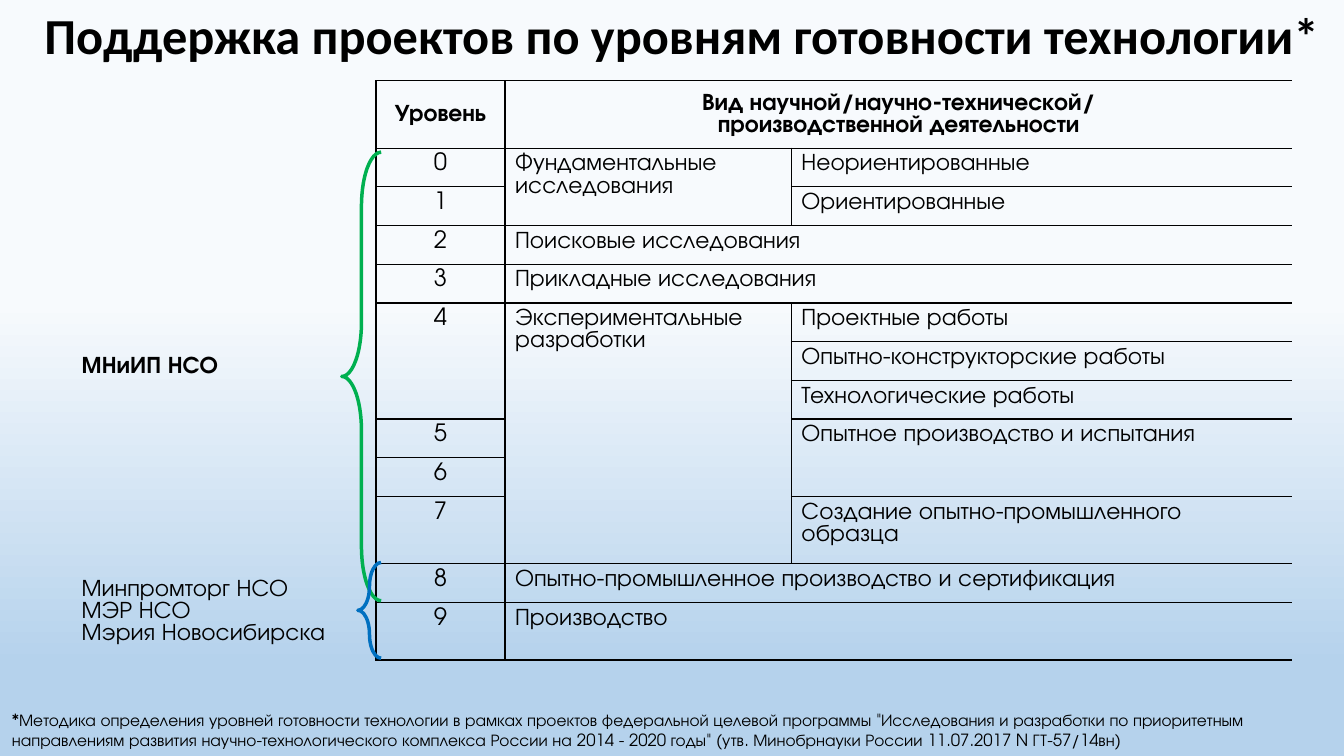
from lxml import etree
from pptx import Presentation
from pptx.dml.color import RGBColor
from pptx.enum.shapes import MSO_SHAPE as Shape
from pptx.enum.text import MSO_ANCHOR as Anchor, PP_ALIGN as Align
from pptx.oxml import parse_xml
from pptx.oxml.ns import nsdecls, qn
from pptx.util import Inches, Pt

BLACK = RGBColor(0x00, 0x00, 0x00)
GREEN = RGBColor(0x00, 0xB0, 0x50)
BLUE = RGBColor(0x00, 0x70, 0xC0)
SKY_LIGHT = RGBColor(0xF7, 0xFA, 0xFD)
SKY_DEEP = RGBColor(0xB5, 0xD2, 0xEC)

BODY_FONT = "TeX Gyre Adventor"
TITLE_FONT = "Calibri"
NO_STYLE = "{2D5ABB26-0587-4C30-8999-92F81FD0307C}"

TITLE = "Поддержка проектов по уровням готовности технологии*"
FOOTNOTE = (
    "*Методика определения уровней готовности технологии в рамках проектов "
    'федеральной целевой программы "Исследования и разработки по приоритетным '
    "направлениям развития научно-технологического комплекса России на "
    '2014 - 2020 годы" (утв. Минобрнауки России 11.07.2017 N ГТ-57/14вн)'
)

TABLE_HEIGHT = 5.74
COLUMN_WIDTHS = [3.02, 1.28, 2.84, 4.97]
TALL_ROWS = {0: 0.67, 10: 0.67, 12: 0.57}
ROW_COUNT = 13
SINGLE_ROW = (TABLE_HEIGHT - sum(TALL_ROWS.values())) / (ROW_COUNT - len(TALL_ROWS))

SUPPORTERS = [
    (1, 10, "МНиИП НСО"),
    (11, 2, "Минпромторг НСО\nМЭР НСО\nМэрия Новосибирска"),
]
LEVEL_SPANS = [1, 1, 1, 1, 3, 1, 1, 1, 1, 1]
ACTIVITIES = [
    (1, 2, 2, 1, "Фундаментальные исследования"),
    (1, 3, 1, 1, "Неориентированные"),
    (2, 3, 1, 1, "Ориентированные"),
    (3, 2, 1, 2, "Поисковые исследования"),
    (4, 2, 1, 2, "Прикладные исследования"),
    (5, 2, 6, 1, "Экспериментальные разработки"),
    (5, 3, 1, 1, "Проектные работы"),
    (6, 3, 1, 1, "Опытно-конструкторские работы"),
    (7, 3, 1, 1, "Технологические работы"),
    (8, 3, 2, 1, "Опытное производство и испытания"),
    (10, 3, 1, 1, "Создание опытно-промышленного образца"),
    (11, 2, 1, 2, "Опытно-промышленное производство и сертификация"),
    (12, 2, 1, 2, "Производство"),
]


def style_text(text_frame, size, font_name, bold=False, align=Align.LEFT):
    """Format every paragraph and run of a text frame."""
    for paragraph in text_frame.paragraphs:
        paragraph.alignment = align
        for run in paragraph.runs:
            run.font.size = Pt(size)
            run.font.name = font_name
            run.font.bold = bold
            run.font.color.rgb = BLACK


def add_text(slide, box, text, size, font_name, anchor=Anchor.TOP, **style):
    """Add a wrapped text box."""
    text_frame = slide.shapes.add_textbox(*map(Inches, box)).text_frame
    text_frame.word_wrap = True
    text_frame.vertical_anchor = anchor
    text_frame.text = text
    style_text(text_frame, size, font_name, **style)


def add_brace(slide, box, color):
    """Add an outlined left brace."""
    shape = slide.shapes.add_shape(Shape.LEFT_BRACE, *map(Inches, box))
    shape.shadow.inherit = False
    shape.fill.background()
    shape.line.color.rgb = color
    shape.line.width = Pt(2.5)
    shape.adjustments[0] = 1.38
    shape.adjustments[1] = 0.5


def set_borders(cell, sides):
    """Draw thin black lines on the given sides of a cell."""
    properties = cell._tc.get_or_add_tcPr()
    for position, side in enumerate(sides):
        line = parse_xml(f'<a:ln{side} {nsdecls("a")} w="{Pt(1)}"/>')
        fill = etree.SubElement(line, qn("a:solidFill"))
        etree.SubElement(fill, qn("a:srgbClr"), val=str(BLACK))
        properties.insert(position, line)


def fill_cell(table, row, column, rows, columns, text, sides,
              anchor=Anchor.TOP, bold=False, align=Align.LEFT):
    """Merge a block of cells if needed, then write and outline it."""
    cell = table.cell(row, column)
    if rows * columns > 1:
        cell.merge(table.cell(row + rows - 1, column + columns - 1))
    cell.text_frame.text = text
    cell.vertical_anchor = anchor
    style_text(cell.text_frame, 17, BODY_FONT, bold, align)
    set_borders(cell, sides)
    return cell


def add_level_table(slide):
    """Add the table of readiness levels."""
    table = slide.shapes.add_table(
        ROW_COUNT, len(COLUMN_WIDTHS),
        Inches(0.71), Inches(0.8), Inches(12.11), Inches(TABLE_HEIGHT),
    ).table
    table._tbl.tblPr.find(qn("a:tableStyleId")).text = NO_STYLE
    table.first_row = table.horz_banding = False
    for column, width in zip(table.columns, COLUMN_WIDTHS):
        column.width = Inches(width)
    for index, row in enumerate(table.rows):
        row.height = Inches(TALL_ROWS.get(index, SINGLE_ROW))
    for cell in table.iter_cells():
        cell.fill.background()

    heading = {"anchor": Anchor.MIDDLE, "bold": True, "align": Align.CENTER}
    fill_cell(table, 0, 1, 1, 1, "Уровень", "LRTB", **heading)
    fill_cell(table, 0, 2, 1, 2,
              "Вид научной/научно-технической/\nпроизводственной деятельности",
              "LTB", **heading)

    for row, rows, text in SUPPORTERS:
        main_supporter = row == 1
        cell = fill_cell(table, row, 0, rows, 1, text, "R",
                         anchor=Anchor.MIDDLE, bold=main_supporter)
        if main_supporter:
            cell.margin_top = Inches(0.27)

    for level, rows in enumerate(LEVEL_SPANS):
        row = 1 + sum(LEVEL_SPANS[:level])
        fill_cell(table, row, 1, rows, 1, str(level), "LRTB", align=Align.CENTER)

    for row, column, rows, columns, text in ACTIVITIES:
        sides = "LTB" if column + columns == len(COLUMN_WIDTHS) else "LRTB"
        fill_cell(table, row, column, rows, columns, text, sides)


def set_background(slide):
    """Give the slide a vertical gradient."""
    fill = slide.background.fill
    fill.gradient()
    fill.gradient_angle = 270
    stops = [(0.4, SKY_LIGHT), (0.88, SKY_DEEP)]
    for stop, (position, color) in zip(fill.gradient_stops, stops):
        stop.position = position
        stop.color.rgb = color


def main():
    """Build and save the slide."""
    presentation = Presentation()
    presentation.slide_width = Inches(13.33)
    presentation.slide_height = Inches(7.5)
    slide = presentation.slides.add_slide(presentation.slide_layouts[6])
    set_background(slide)
    add_text(slide, (0.1, -0.01, 13.33, 0.71), TITLE, 36, TITLE_FONT,
             anchor=Anchor.MIDDLE, bold=True, align=Align.CENTER)
    add_level_table(slide)
    add_brace(slide, (3.39, 1.51, 0.39, 4.45), GREEN)
    add_brace(slide, (3.55, 5.58, 0.23, 0.95), BLUE)
    add_text(slide, (0.02, 6.99, 13.33, 0.5), FOOTNOTE, 12, BODY_FONT)
    presentation.save("out.pptx")


if __name__ == "__main__":
    main()
